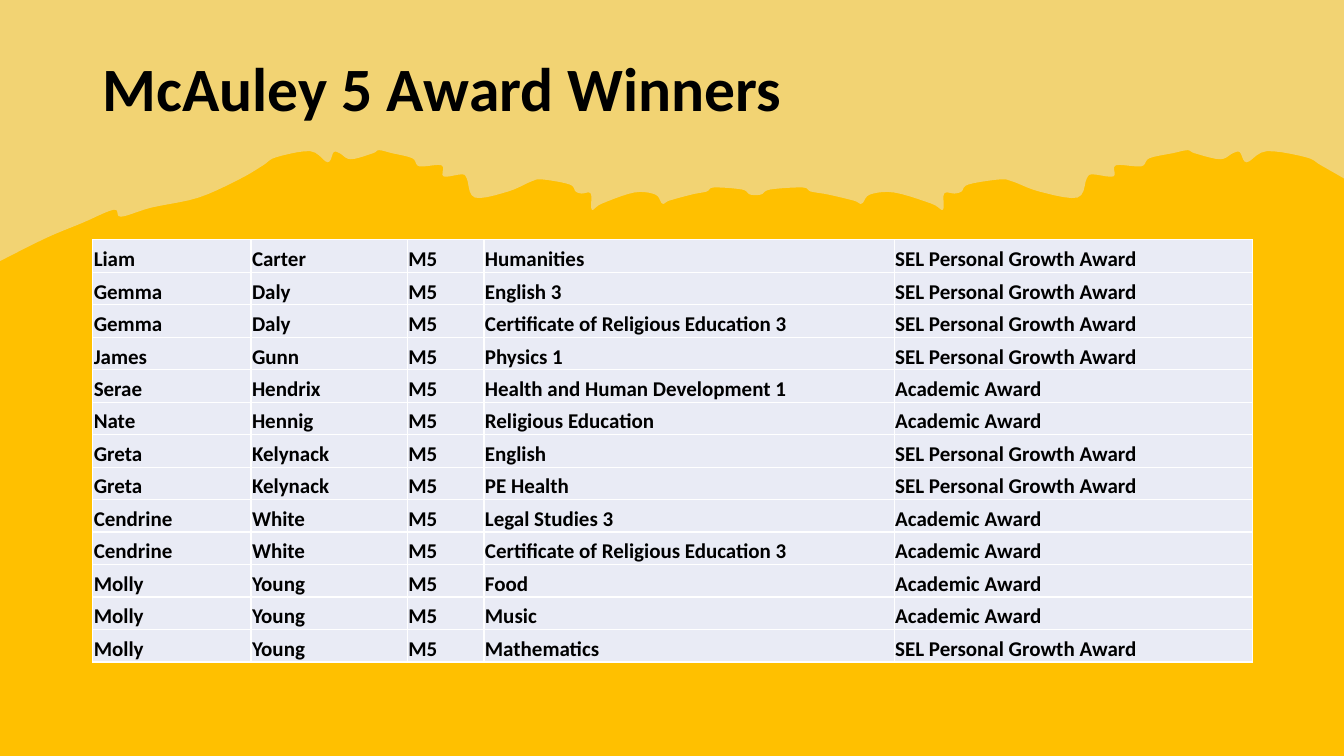
from lxml.etree import SubElement
from pptx import Presentation
from pptx.dml.color import RGBColor
from pptx.enum.text import MSO_ANCHOR as Anchor, PP_ALIGN as Align
from pptx.oxml.ns import qn
from pptx.util import Pt

PX = 9144  # EMU per px, 100 px to the inch
WIDTH, HEIGHT = 1333, 750
FONT = "Calibri"
COLORS = {"background": "FFC000", "torn": "E7E6E6", "cell": "E9EBF5",
          "border": "FFFFFF", "text": "000000"}

COLUMN_WIDTHS = [157, 155, 76, 407, 355]
PERSONAL, ACADEMIC = "SEL Personal Growth Award", "Academic Award"
WINNERS = [
    ("Liam", "Carter", "Humanities", PERSONAL),
    ("Gemma", "Daly", "English 3", PERSONAL),
    ("Gemma", "Daly", "Certificate of Religious Education 3", PERSONAL),
    ("James", "Gunn", "Physics 1", PERSONAL),
    ("Serae", "Hendrix", "Health and Human Development 1", ACADEMIC),
    ("Nate", "Hennig", "Religious Education", ACADEMIC),
    ("Greta", "Kelynack", "English", PERSONAL),
    ("Greta", "Kelynack", "PE Health", PERSONAL),
    ("Cendrine", "White", "Legal Studies 3", ACADEMIC),
    ("Cendrine", "White", "Certificate of Religious Education 3", ACADEMIC),
    ("Molly", "Young", "Food", ACADEMIC),
    ("Molly", "Young", "Music", ACADEMIC),
    ("Molly", "Young", "Mathematics", PERSONAL),
]

# The right side of the torn edge is the ridge mirrored and stretched
SLOPE = [(0, 259), (46, 236), (82, 221), (113, 208), (120, 215), (150, 206),
         (197, 196)]
RIDGE = [(239, 177), (261, 164), (274, 156), (308, 150), (325, 161),
         (331, 151), (337, 152), (348, 158), (370, 152), (376, 149),
         (389, 152), (409, 157), (416, 165), (438, 164), (440, 175),
         (458, 173), (463, 177), (471, 196), (504, 190), (527, 180),
         (538, 178), (565, 183), (571, 190), (577, 192), (586, 192),
         (587, 208), (597, 202), (629, 191), (650, 193), (657, 202),
         (664, 199), (686, 193), (701, 190), (708, 186), (736, 188),
         (744, 193)]
MIRROR_X, STRETCH = 749, 1.15


def rgb(name):
    return RGBColor.from_string(COLORS[name])


def write_text(box, frame, text, size, anchor, margins, spacing=1.0):
    """Fill frame with text; box (a frame or a cell) holds anchor and margins."""
    box.vertical_anchor = anchor
    (box.margin_left, box.margin_top,
     box.margin_right, box.margin_bottom) = [m * PX for m in margins]
    paragraph = frame.paragraphs[0]
    paragraph.alignment = Align.LEFT
    paragraph.line_spacing = spacing
    run = paragraph.add_run()
    run.text = text
    run.font.name, run.font.size, run.font.bold = FONT, Pt(size), True
    run.font.color.rgb = rgb("text")


def smooth(points, steps=5):
    """Join points by a Catmull-Rom curve."""
    padded = [points[0], *points, points[-1]]
    curve = [points[0]]
    for quad in zip(padded, padded[1:], padded[2:], padded[3:]):
        for step in range(1, steps + 1):
            t = step / steps
            curve.append(tuple(
                b + t * (c - a + t * (2 * a - 5 * b + 4 * c - d
                                      + t * (3 * b - a - 3 * c + d))) / 2
                for a, b, c, d in zip(*quad)))
    return curve


def add_torn_band(slide, left, top, width):
    mirrored = [(min(width, MIRROR_X + STRETCH * (MIRROR_X - x)), y)
                for x, y in reversed(RIDGE)]
    outline = smooth(SLOPE + RIDGE + mirrored) + [(width, 0), (0, 0)]
    outline = [(round((left + x) * PX), round((top + y) * PX)) for x, y in outline]
    builder = slide.shapes.build_freeform(*outline[0])
    builder.add_line_segments(outline[1:], close=True)
    band = builder.convert_to_shape()
    band.shadow.inherit = False
    band.line.fill.background()
    band.fill.solid()
    band.fill.fore_color.rgb = rgb("torn")
    # Half transparent
    tint = band._element.spPr.find(qn("a:solidFill"))[0]
    SubElement(tint, qn("a:alpha"), val="50000")


def place_title(slide, left, top, width, height):
    title = slide.shapes.title
    title.left, title.top, title.width, title.height = [
        length * PX for length in (left, top, width, height)]
    frame = title.text_frame
    frame.word_wrap = True
    write_text(frame, frame, "McAuley 5 Award Winners", size=44,
               anchor=Anchor.MIDDLE, margins=(10, 5, 10, 5), spacing=0.9)


def add_borders(cell):
    properties = cell._tc.get_or_add_tcPr()
    for side in ("lnL", "lnR", "lnT", "lnB"):
        line = SubElement(properties, qn(f"a:{side}"), w=str(Pt(1)))
        fill = SubElement(line, qn("a:solidFill"))
        SubElement(fill, qn("a:srgbClr"), val=COLORS["border"])


def add_winners_table(slide, left, top, width, height):
    table = slide.shapes.add_table(
        len(WINNERS), len(COLUMN_WIDTHS),
        left * PX, top * PX, width * PX, height * PX).table
    table.first_row = table.horz_banding = False
    for column, column_width in zip(table.columns, COLUMN_WIDTHS):
        column.width = column_width * PX
    for row, (first, last, subject, award) in zip(table.rows, WINNERS):
        row.height = height * PX // len(WINNERS)
        for cell, text in zip(row.cells, (first, last, "M5", subject, award)):
            add_borders(cell)
            cell.fill.solid()
            cell.fill.fore_color.rgb = rgb("cell")
            write_text(cell, cell.text_frame, text, size=15,
                       anchor=Anchor.BOTTOM, margins=(1, 1, 1, 0))


def main():
    deck = Presentation()
    deck.slide_width, deck.slide_height = WIDTH * PX, HEIGHT * PX
    slide = deck.slides.add_slide(deck.slide_layouts[5])
    slide.background.fill.solid()
    slide.background.fill.fore_color.rgb = rgb("background")
    add_torn_band(slide, 0, 0, WIDTH)
    # Keep the title in front of the band
    slide.shapes._spTree.append(slide.shapes.title._element)
    place_title(slide, 92, 40, 1150, 102)
    add_winners_table(slide, 92, 238, sum(COLUMN_WIDTHS), 419)
    deck.save("out.pptx")


if __name__ == "__main__":
    main()
